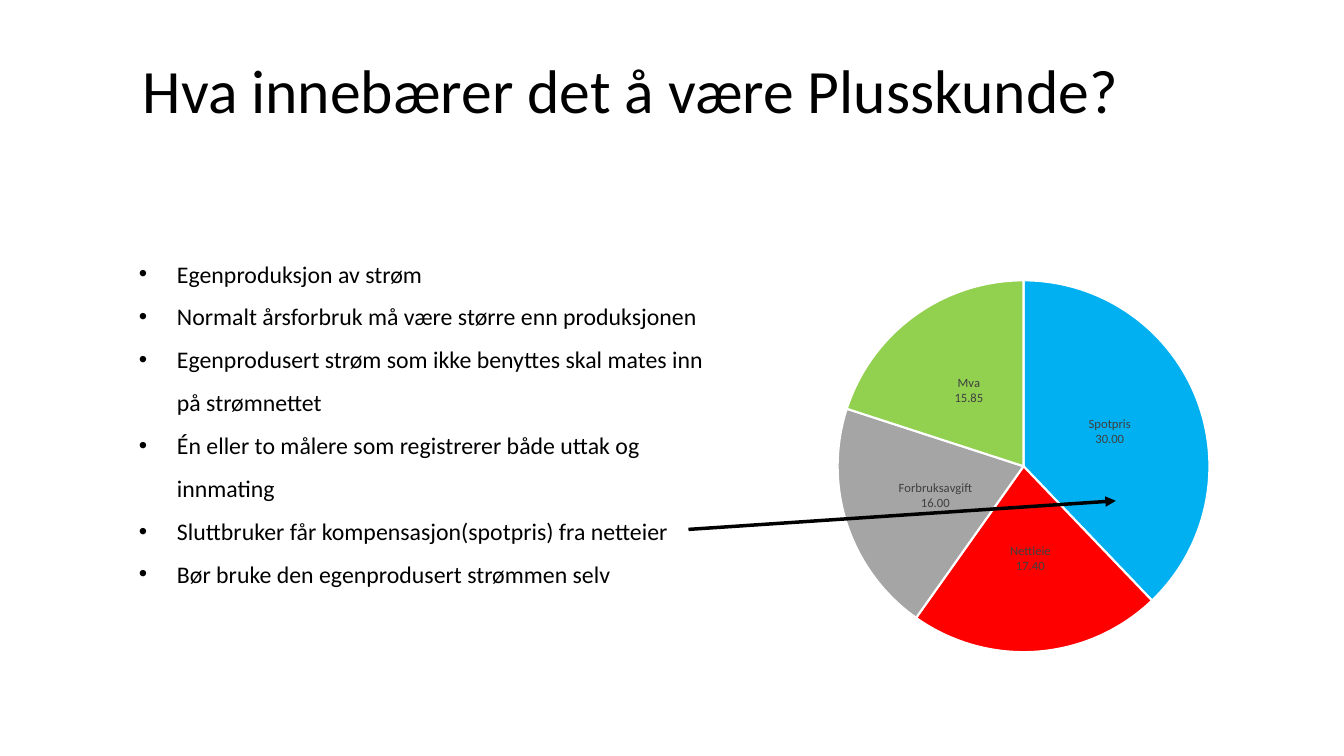
import pptx
import pptx.chart.data
import pptx.dml.color
import pptx.enum.chart
import pptx.enum.shapes
import pptx.enum.text
import pptx.oxml
import pptx.oxml.ns
import pptx.util
from pptx.util import Cm, Pt

# Content
TITLE = "Hva innebærer det å være Plusskunde?"
BULLETS = [
    "Egenproduksjon av strøm",
    "Normalt årsforbruk må være større enn produksjonen",
    "Egenprodusert strøm som ikke benyttes skal mates inn på strømnettet",
    "Én eller to målere som registrerer både uttak og innmating",
    "Sluttbruker får kompensasjon(spotpris) fra netteier",
    "Bør bruke den egenprodusert strømmen selv",
]
PRICE_PARTS = [  # name, value, colour
    ("Spotpris", 30, "00B0F0"),
    ("Nettleie", 17.4, "FF0000"),
    ("Forbruksavgift", 16, "A5A5A5"),
    ("Mva", 15.85, "92D050"),
]

# Places in cm: left, top, width, height
SLIDE_SIZE = (33.87, 19.05)
TITLE_BOX = (3.35, 1.19, 27.18, 2.13)
BULLET_BOX = (3.25, 6.05, 14.96, 9.75)
CHART_BOX = (18.16, 6.71, 15.27, 10.08)
ARROW = (17.35, 13.34, 28.12, 12.62)  # from x, y to x, y
BULLET_INDENT = 0.96
PIE_DIAMETER = 9.37

# Formats
TITLE_FORMAT = {"name": "Calibri", "size": Pt(44)}
BULLET_FORMAT = {"name": "Calibri", "size": Pt(17)}
CHART_FORMAT = {"name": "Calibri", "size": Pt(10)}
LABEL_FORMAT = {"name": "Calibri", "size": Pt(9)}


def colour(hex_value):
    return pptx.dml.color.RGBColor.from_string(hex_value)


def format_font(font, values, hex_value="000000"):
    for name, value in values.items():
        setattr(font, name, value)
    font.color.rgb = colour(hex_value)


def lengths(values):
    return [Cm(value) for value in values]


def add_element(parent, tag, **attributes):
    element = pptx.oxml.parse_xml(f"<{tag} {pptx.oxml.ns.nsdecls(tag.split(':')[0])}/>")
    for name, value in attributes.items():
        element.set(name, str(value))
    parent.append(element)
    return element


def add_text(slide, box, lines, font_format, bulleted=False):
    frame = slide.shapes.add_textbox(*lengths(box)).text_frame
    frame.word_wrap = True
    frame.auto_size = pptx.enum.text.MSO_AUTO_SIZE.SHAPE_TO_FIT_TEXT
    for index, line in enumerate(lines):
        paragraph = frame.add_paragraph() if index else frame.paragraphs[0]
        if bulleted:
            paragraph.line_spacing = 1.5
            properties = paragraph._p.get_or_add_pPr()
            indent = Cm(BULLET_INDENT)
            properties.set("marL", str(indent))
            properties.set("indent", str(-indent))
            add_element(properties, "a:buFont", typeface="Arial")
            add_element(properties, "a:buChar", char="•")
        run = paragraph.add_run()
        run.text = line
        format_font(run.font, font_format)


def add_price_chart(slide):
    names, values, fills = zip(*PRICE_PARTS)
    data = pptx.chart.data.CategoryChartData()
    data.categories = names
    data.add_series("Series 1", values)
    chart = slide.shapes.add_chart(
        pptx.enum.chart.XL_CHART_TYPE.PIE, *lengths(CHART_BOX), data).chart
    chart.has_title = False
    chart.has_legend = False
    format_font(chart.font, CHART_FORMAT)

    # Slices
    plot = chart.plots[0]
    plot.vary_by_categories = True
    for index, fill in enumerate(fills):
        slice_format = plot.series[0].points[index].format
        slice_format.fill.solid()
        slice_format.fill.fore_color.rgb = colour(fill)
        slice_format.line.color.rgb = colour("FFFFFF")
        slice_format.line.width = Pt(1.5)

    # Labels: name above value
    labels = plot.series[0].data_labels
    label_settings = {
        "show_category_name": True,
        "show_value": True,
        "show_percentage": False,
        "number_format": "#,##0.00",
        "number_format_is_linked": False,
        "position": pptx.enum.chart.XL_LABEL_POSITION.CENTER,
    }
    for name, value in label_settings.items():
        setattr(labels, name, value)
    format_font(labels.font, LABEL_FORMAT, "404040")
    label_element = labels._element
    separator = add_element(label_element, "c:separator")
    separator.text = "\n"
    label_element.find(pptx.oxml.ns.qn("c:showBubbleSize")).addnext(separator)

    # Centred pie of fixed diameter
    plot_area = chart._chartSpace.chart.plotArea
    for old_layout in plot_area.findall(pptx.oxml.ns.qn("c:layout")):
        plot_area.remove(old_layout)
    layout = add_element(plot_area, "c:layout")
    plot_area.insert(0, layout)
    manual = add_element(layout, "c:manualLayout")
    width, height = (PIE_DIAMETER / side for side in CHART_BOX[2:])
    settings = {
        "layoutTarget": "inner", "xMode": "edge", "yMode": "edge",
        "x": (1 - width) / 2, "y": (1 - height) / 2, "w": width, "h": height,
    }
    for name, value in settings.items():
        add_element(manual, f"c:{name}", val=value)


def add_arrow(slide):
    arrow = slide.shapes.add_connector(
        pptx.enum.shapes.MSO_CONNECTOR.STRAIGHT, *lengths(ARROW))
    arrow.line.color.rgb = colour("000000")
    arrow.line.width = Pt(2.5)
    add_element(arrow.line._get_or_add_ln(), "a:tailEnd", type="triangle")
    add_element(arrow._element.spPr, "a:effectLst")


def main():
    presentation = pptx.Presentation()
    presentation.slide_width, presentation.slide_height = lengths(SLIDE_SIZE)
    slide = presentation.slides.add_slide(presentation.slide_layouts[6])
    add_text(slide, TITLE_BOX, [TITLE], TITLE_FORMAT)
    add_text(slide, BULLET_BOX, BULLETS, BULLET_FORMAT, bulleted=True)
    add_price_chart(slide)
    add_arrow(slide)
    presentation.save("out.pptx")


if __name__ == "__main__":
    main()
